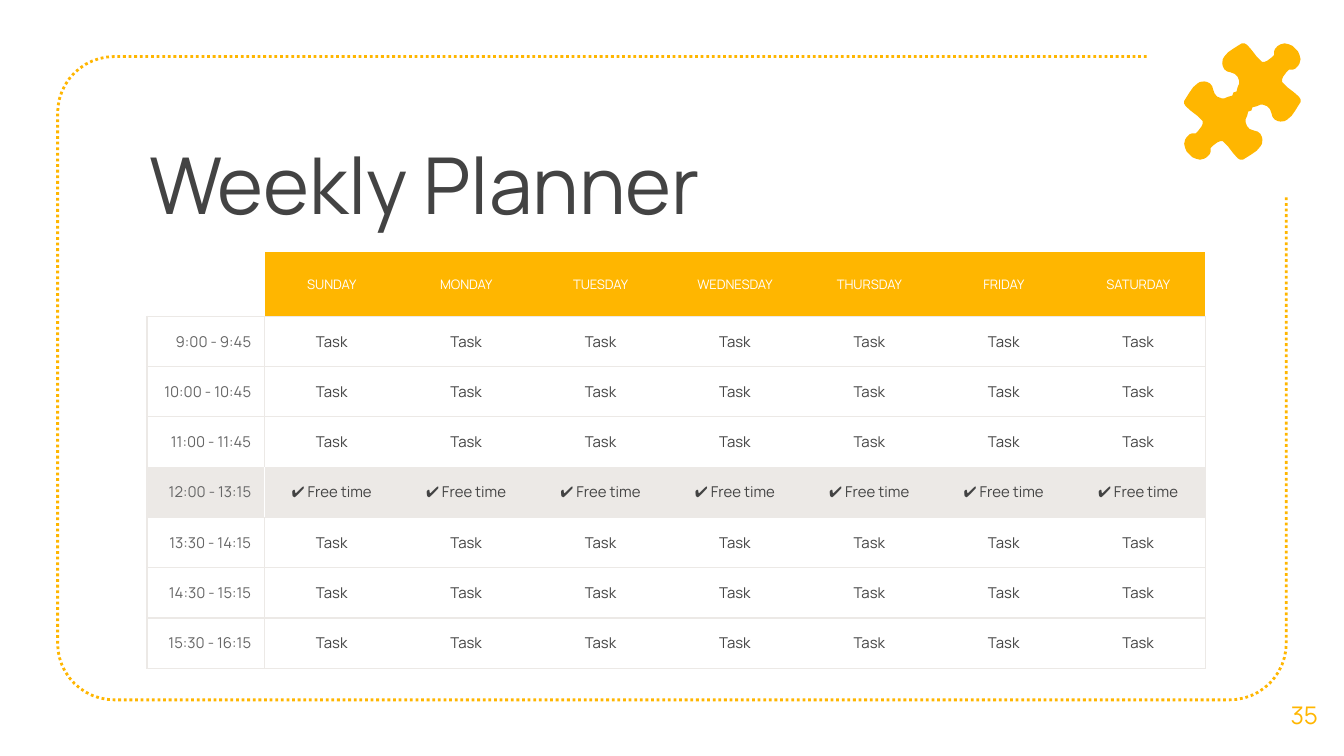
import math

from lxml import etree
from pptx import Presentation
from pptx.dml.color import RGBColor
from pptx.enum.dml import MSO_LINE
from pptx.enum.text import MSO_ANCHOR, MSO_AUTO_SIZE, PP_ALIGN
from pptx.oxml.ns import qn
from pptx.util import Cm, Pt

LEFT, CENTER, RIGHT = PP_ALIGN.LEFT, PP_ALIGN.CENTER, PP_ALIGN.RIGHT
MIDDLE = MSO_ANCHOR.MIDDLE
DOTTED = MSO_LINE.ROUND_DOT
NO_AUTOFIT = MSO_AUTO_SIZE.NONE

YELLOW = RGBColor(0xFF, 0xB6, 0x00)
DARK = RGBColor(0x43, 0x43, 0x43)
GRAY = RGBColor(0x66, 0x66, 0x66)
SAND = RGBColor(0xEC, 0xE9, 0xE6)
WHITE = RGBColor(0xFF, 0xFF, 0xFF)

FONT = "Manrope"
PLAIN_TABLE_STYLE = "{2D5ABB26-0587-4C30-8999-92F81FD0307C}"
TITLE_ONLY = 5

DAYS = ["SUNDAY", "MONDAY", "TUESDAY", "WEDNESDAY", "THURSDAY", "FRIDAY", "SATURDAY"]
TIMES = ["9:00 - 9:45", "10:00 - 10:45", "11:00 - 11:45", "12:00 - 13:15",
         "13:30 - 14:15", "14:30 - 15:15", "15:30 - 16:15"]
BREAK_TIME = "12:00 - 13:15"

# A quarter of the puzzle piece, from notch to tab, in cm from its centre
PUZZLE_QUARTER = [
    (-0.17, -0.17), (-0.11, -0.19), (-0.09, -0.27), (-0.06, -0.34), (-0.06, -0.39),
    (-0.09, -0.47), (-0.14, -0.52), (-0.22, -0.55), (-0.29, -0.57), (-0.34, -0.61),
    (-0.37, -0.67), (-0.38, -0.72), (-0.37, -0.8), (-0.34, -0.85), (-0.27, -0.93),
    (-0.17, -1), (-0.09, -1.05), (-0.01, -1.1), (0.04, -1.1), (0.09, -1.07),
    (0.17, -0.98), (0.27, -0.85), (0.32, -0.8), (0.37, -0.75), (0.42, -0.75),
    (0.47, -0.77), (0.55, -0.83), (0.6, -0.88), (0.6, -0.95), (0.62, -1),
    (0.67, -1.05), (0.72, -1.08), (0.8, -1.1), (0.88, -1.08), (0.95, -1.05), (1, -1),
]


def write_text(frame, text, size=8, color=DARK, align=CENTER):
    paragraph = frame.paragraphs[0]
    paragraph.alignment = align
    run = paragraph.add_run()
    run.text = text
    run.font.name = FONT
    run.font.size = Pt(size)
    run.font.color.rgb = color


def set_insets(box):
    """Pad and centre a text frame or a table cell."""
    box.margin_left = box.margin_right = Cm(0.25)
    box.margin_top = box.margin_bottom = Cm(0.25)
    box.vertical_anchor = MIDDLE


def add_outline(slide, points, close):
    """Draw a freeform through points given in cm."""
    corners = [(Cm(x), Cm(y)) for x, y in points]
    builder = slide.shapes.build_freeform(*corners[0], scale=1.0)
    builder.add_line_segments(corners[1:], close=close)
    outline = builder.convert_to_shape()
    outline.shadow.inherit = False
    return outline


def corner_arc(x, y, radius, start, step, count=12):
    """Points of a quarter circle, turning anticlockwise on the slide."""
    angles = [math.radians(start + step * i / count) for i in range(count + 1)]
    return [(x + radius * math.cos(a), y + radius * math.sin(a)) for a in angles]


def add_frame(slide):
    left, top, right, bottom, radius = 1.09, 1.07, 24.31, 13.23, 1.07
    points = [(21.67, top)]
    points += corner_arc(left + radius, top + radius, radius, 270, -90)
    points += corner_arc(left + radius, bottom - radius, radius, 180, -90)
    points += corner_arc(right - radius, bottom - radius, radius, 90, -90)
    points.append((right, 3.71))
    frame = add_outline(slide, points, close=False)
    frame.fill.background()
    frame.line.color.rgb = YELLOW
    frame.line.width = Pt(1.5)
    frame.line.dash_style = DOTTED


def add_puzzle_piece(slide, center_x, center_y):
    # Mirror the quarter across its diagonal, then turn the half by 180 degrees
    half = PUZZLE_QUARTER + [(-y, -x) for x, y in reversed(PUZZLE_QUARTER)]
    whole = half + [(-x, -y) for x, y in half]
    piece = add_outline(slide, [(center_x + x, center_y + y) for x, y in whole], close=True)
    piece.fill.solid()
    piece.fill.fore_color.rgb = YELLOW
    piece.line.fill.background()


def format_cell(cell, fill=None, **borders):
    """Borders are named by side, L, R, T and B, and hold a colour."""
    properties = cell._tc.get_or_add_tcPr()
    for side in "LRTB":
        line = etree.SubElement(properties, qn(f"a:ln{side}"), w=str(Pt(0.75)))
        if side in borders:
            solid = etree.SubElement(line, qn("a:solidFill"))
            etree.SubElement(solid, qn("a:srgbClr"), val=str(borders[side]))
        else:
            etree.SubElement(line, qn("a:noFill"))
    if fill is None:
        cell.fill.background()
    else:
        cell.fill.solid()
        cell.fill.fore_color.rgb = fill


def fill_cell(cell, text, **text_format):
    set_insets(cell)
    write_text(cell.text_frame, text, **text_format)


def add_planner(slide):
    label_width, day_width, header_height, row_height = 2.22, 2.54, 1.22, 0.95
    graphic = slide.shapes.add_table(
        len(TIMES) + 1, len(DAYS) + 1, Cm(2.78), Cm(4.76),
        Cm(label_width + day_width * len(DAYS)),
        Cm(header_height + row_height * len(TIMES)))
    planner = graphic.table
    planner.first_row = planner.horz_banding = False
    planner._tbl.tblPr.find(qn("a:tableStyleId")).text = PLAIN_TABLE_STYLE
    for index, column in enumerate(planner.columns):
        column.width = Cm(day_width if index else label_width)
    for index, row in enumerate(planner.rows):
        row.height = Cm(row_height if index else header_height)

    # Header row
    format_cell(planner.cell(0, 0), B=SAND)
    for column, day in enumerate(DAYS, 1):
        header = planner.cell(0, column)
        format_cell(header, fill=YELLOW, B=SAND)
        fill_cell(header, day, size=7, color=WHITE)

    # One row for each time slot
    for row, time in enumerate(TIMES, 1):
        is_break = time == BREAK_TIME
        fill = SAND if is_break else None
        divider = WHITE if is_break else SAND
        activity = "✔ Free time" if is_break else "Task"

        label = planner.cell(row, 0)
        format_cell(label, fill=fill, L=SAND, R=divider, T=SAND, B=SAND)
        fill_cell(label, time, color=GRAY, align=RIGHT)
        for column in range(1, len(DAYS) + 1):
            borders = {"T": SAND, "B": SAND}
            if column == 1:
                borders["L"] = divider
            if column == len(DAYS):
                borders["R"] = SAND
            slot = planner.cell(row, column)
            format_cell(slot, fill=fill, **borders)
            fill_cell(slot, activity)


def add_title(slide, text):
    title = slide.shapes.title
    title.left, title.top, title.width, title.height = Cm(2.57), Cm(2.26), Cm(20.24), Cm(2.39)
    set_insets(title.text_frame)
    title.text_frame.auto_size = NO_AUTOFIT
    write_text(title.text_frame, text, size=42, align=LEFT)


def add_page_number(slide, number):
    box = slide.shapes.add_textbox(Cm(23.9), Cm(12.75), Cm(1.5), Cm(1.52))
    box.text_frame.word_wrap = True
    set_insets(box.text_frame)
    write_text(box.text_frame, number, size=13, color=YELLOW)


def main():
    presentation = Presentation()
    presentation.slide_width, presentation.slide_height = Cm(25.4), Cm(14.29)
    slide = presentation.slides.add_slide(presentation.slide_layouts[TITLE_ONLY])
    add_frame(slide)
    add_title(slide, "Weekly Planner")
    add_page_number(slide, "35")
    add_planner(slide)
    add_puzzle_piece(slide, 23.48, 1.92)
    presentation.save("out.pptx")


if __name__ == "__main__":
    main()
